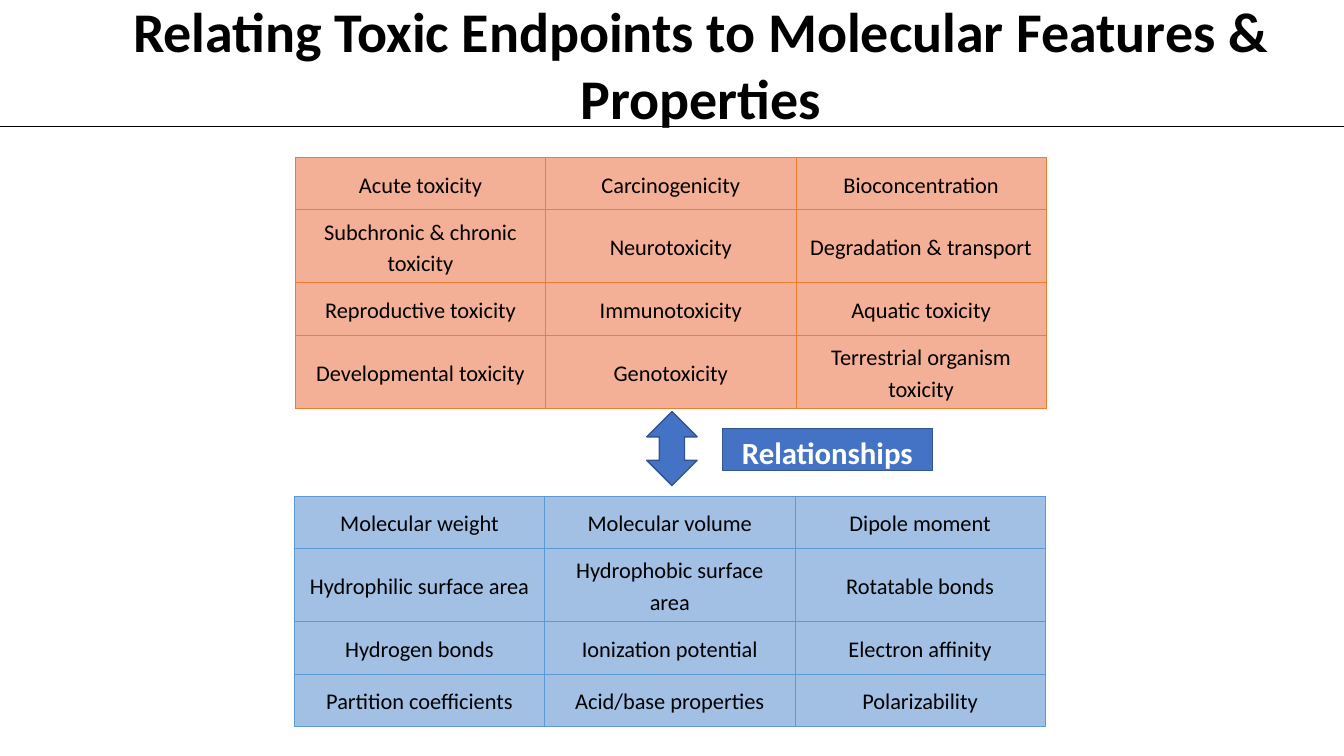
import pptx
import pptx.dml.color
import pptx.enum.shapes
import pptx.enum.text
import pptx.oxml
import pptx.oxml.ns
import pptx.util

COLS, ROWS = 160, 90  # square grid cells across and down the slide
CELL = pptx.util.Inches(7.5) / ROWS
FONT = "Calibri"
HUES = {
    "ink": "000000",
    "white": "FFFFFF",
    "blue": "4472C4",
    "navy": "325491",
    "toxic": "F4B096",
    "toxic edge": "ED7D31",
    "trait": "A2C0E4",
    "trait edge": "5B9BD5",
}
TOXIC = [
    ["Acute toxicity", "Carcinogenicity", "Bioconcentration"],
    ["Subchronic & chronic toxicity", "Neurotoxicity", "Degradation & transport"],
    ["Reproductive toxicity", "Immunotoxicity", "Aquatic toxicity"],
    ["Developmental toxicity", "Genotoxicity", "Terrestrial organism toxicity"],
]
TRAITS = [
    ["Molecular weight", "Molecular volume", "Dipole moment"],
    ["Hydrophilic surface area", "Hydrophobic surface area", "Rotatable bonds"],
    ["Hydrogen bonds", "Ionization potential", "Electron affinity"],
    ["Partition coefficients", "Acid/base properties", "Polarizability"],
]


def span(*cells):
    """Turn grid cells into slide lengths."""
    return [pptx.util.Emu(round(n * CELL)) for n in cells]


def hue(name):
    return pptx.dml.color.RGBColor.from_string(HUES[name])


def write(frame, text, size, color, bold=False, spacing=None):
    frame.word_wrap = True
    frame.text = text
    para = frame.paragraphs[0]
    para.alignment = pptx.enum.text.PP_ALIGN.CENTER
    if spacing:
        para.line_spacing = spacing
    font = para.runs[0].font
    font.name, font.size, font.bold = FONT, pptx.util.Pt(size), bold
    font.color.rgb = hue(color)


def edge(cell, color):
    """Draw a thin border on all four sides of a table cell."""
    props = cell._tc.get_or_add_tcPr()
    for at, side in enumerate(("lnL", "lnR", "lnT", "lnB")):
        props.insert(at, pptx.oxml.parse_xml(
            f'<a:{side} {pptx.oxml.ns.nsdecls("a")} w="6350"><a:solidFill>'
            f'<a:srgbClr val="{HUES[color]}"/></a:solidFill></a:{side}>'))


def add_title(slide, left, top, width, height):
    box = slide.shapes.add_textbox(*span(left, top, width, height))
    write(box.text_frame, "Relating Toxic Endpoints to Molecular Features & Properties",
          40, "ink", bold=True)
    rule_y = top + 16.1
    rule = slide.shapes.add_connector(
        pptx.enum.shapes.MSO_CONNECTOR.STRAIGHT, *span(0, rule_y, COLS, rule_y))
    rule.line.color.rgb = hue("ink")
    rule.line.width = pptx.util.Pt(0.5)
    rule._element.spPr.append(
        pptx.oxml.parse_xml(f'<a:effectLst {pptx.oxml.ns.nsdecls("a")}/>'))


def add_grid(slide, words, color, left, top, width, height):
    frame = slide.shapes.add_table(
        len(words), len(words[0]), *span(left, top, width, height))
    table = frame.table
    table.first_row = table.horz_banding = False
    for r, line in enumerate(words):
        for c, text in enumerate(line):
            cell = table.cell(r, c)
            cell.vertical_anchor = pptx.enum.text.MSO_ANCHOR.MIDDLE
            cell.fill.solid()
            cell.fill.fore_color.rgb = hue(color)
            edge(cell, color + " edge")
            write(cell.text_frame, text, 16, "ink", spacing=1.15)


def add_block(slide, kind, left, top, width, height):
    block = slide.shapes.add_shape(kind, *span(left, top, width, height))
    block.shadow.inherit = False
    block.fill.solid()
    block.fill.fore_color.rgb = hue("blue")
    block.line.color.rgb = hue("navy")
    block.line.width = pptx.util.Pt(1)
    return block


def add_link(slide, left, top, width, height):
    """Place the two-way arrow at the left of the box and its label at the right."""
    kinds = pptx.enum.shapes.MSO_SHAPE
    add_block(slide, kinds.UP_DOWN_ARROW, left, top, 6, height)
    label = add_block(slide, kinds.RECTANGLE, left + 9, top + 2, width - 9, 5)
    label.text_frame.vertical_anchor = pptx.enum.text.MSO_ANCHOR.MIDDLE
    write(label.text_frame, "Relationships", 22, "white", bold=True, spacing=1.14)


def main():
    deck = pptx.Presentation()
    deck.slide_width, deck.slide_height = span(COLS, ROWS)
    slide = deck.slides.add_slide(deck.slide_layouts[6])
    add_grid(slide, TOXIC, "toxic", 35.16, 18.72, 89.4, 25)
    add_grid(slide, TRAITS, "trait", 35.04, 59.04, 89.4, 25)
    add_link(slide, 77, 49, 34, 8.8)
    add_title(slide, 2, -1, 162.8, 17.4)
    deck.save("out.pptx")


if __name__ == "__main__":
    main()
